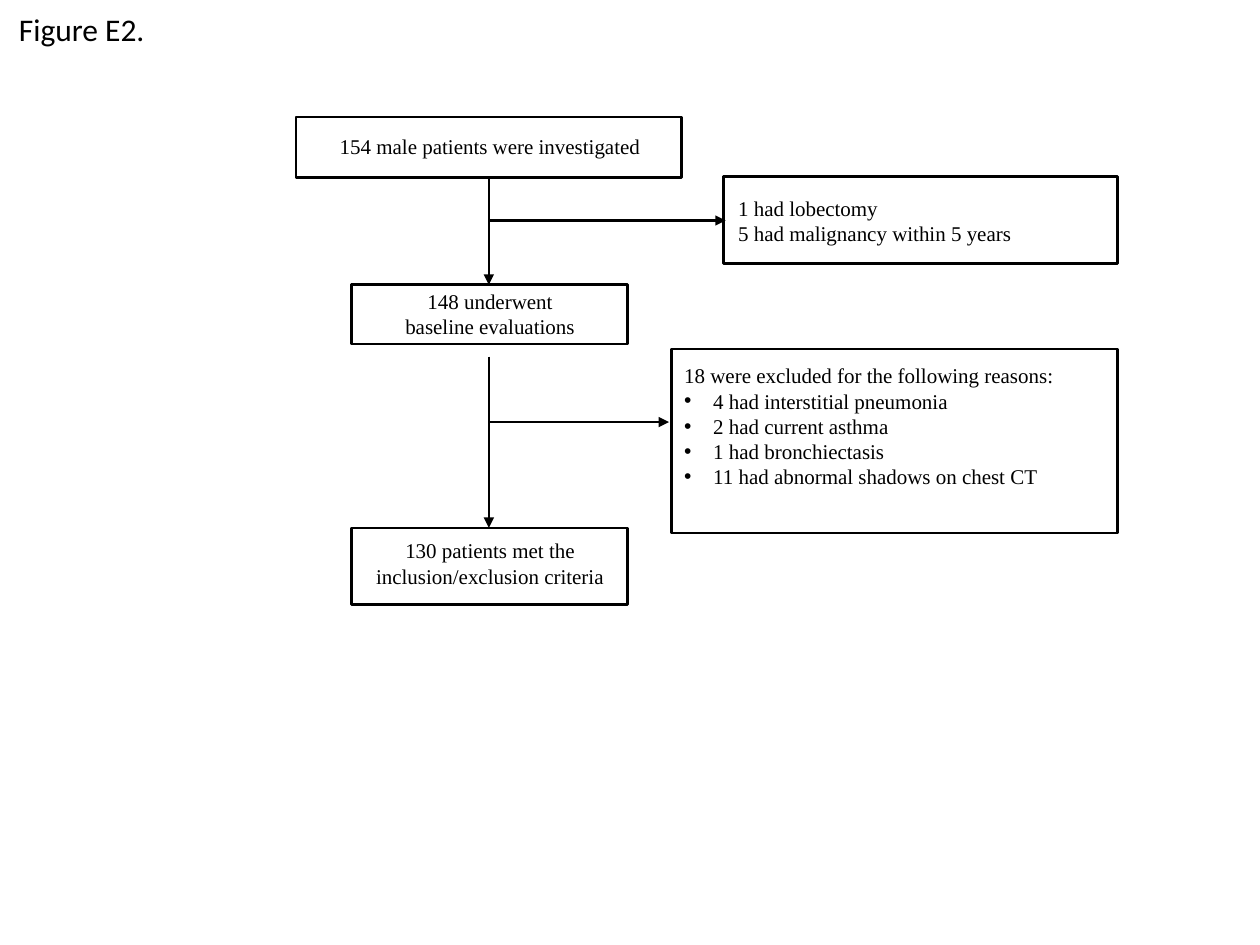
import pptx
import pptx.dml.color
import pptx.enum.shapes
import pptx.enum.text
import pptx.oxml
import pptx.oxml.ns
import pptx.util
from pptx.util import Inches

COLORS = {"ink": "000000"}
ALIGN = pptx.enum.text.PP_ALIGN
ANCHOR = pptx.enum.text.MSO_ANCHOR


class FlowSlide:
    """Style and current slide of a patient flow diagram."""

    ink = pptx.dml.color.RGBColor.from_string(COLORS["ink"])
    title_font = "Calibri"
    body_font = "Times New Roman"
    title_size = pptx.util.Pt(18)
    body_size = pptx.util.Pt(12)
    line_width = pptx.util.Pt(1.5)
    bullet_indent = Inches(0.23)

    def __init__(self, deck):
        self.slide = deck.slides.add_slide(deck.slide_layouts[1])

    def element(self, parent, tag, **attributes):
        child = pptx.oxml.parse_xml(f"<a:{tag} {pptx.oxml.ns.nsdecls('a')}/>")
        for key, value in attributes.items():
            child.set(key, value)
        parent.append(child)

    def place(self, holder, area):
        holder.left, holder.top, holder.width, holder.height = map(Inches, area)

    def set_lines(self, frame, lines, font, size, align, bullets_from=None):
        frame.word_wrap = True
        frame.auto_size = pptx.enum.text.MSO_AUTO_SIZE.NONE
        frame.vertical_anchor = ANCHOR.TOP
        for index, line in enumerate(lines):
            paragraph = frame.paragraphs[0] if index == 0 else frame.add_paragraph()
            paragraph.text = line
            if bullets_from is not None:
                self.bullet(paragraph, index >= bullets_from)
            paragraph.alignment = align
            paragraph.space_before = pptx.util.Pt(0)
            paragraph.font.name = font
            paragraph.font.size = size
            paragraph.font.color.rgb = self.ink

    def bullet(self, paragraph, shown):
        properties = paragraph._p.get_or_add_pPr()
        indent = self.bullet_indent if shown else 0
        properties.set("marL", str(indent))
        properties.set("indent", str(-indent))
        if shown:
            self.element(properties, "buFont", typeface="Arial")
            self.element(properties, "buChar", char="•")
        else:
            self.element(properties, "buNone")

    def title(self, text, area):
        heading = self.slide.shapes.title
        self.place(heading, area)
        self.set_lines(heading.text_frame, [text], self.title_font, self.title_size, ALIGN.LEFT)

    def bullet_list(self, lead, reasons, area):
        body = self.slide.placeholders[1]
        self.place(body, area)
        self.set_lines(body.text_frame, [lead, *reasons], self.body_font, self.body_size,
                       ALIGN.LEFT, bullets_from=1)

    def label(self, lines, area, align=ALIGN.CENTER):
        caption = self.slide.shapes.add_textbox(*map(Inches, area))
        self.set_lines(caption.text_frame, lines, self.body_font, self.body_size, align)

    def box(self, area):
        frame = self.slide.shapes.add_shape(
            pptx.enum.shapes.MSO_SHAPE.RECTANGLE, *map(Inches, area))
        frame.shadow.inherit = False
        frame.fill.background()
        frame.line.color.rgb = self.ink
        frame.line.width = self.line_width

    def arrow(self, start, end):
        connector = self.slide.shapes.add_connector(
            pptx.enum.shapes.MSO_CONNECTOR.STRAIGHT, *map(Inches, (*start, *end)))
        connector.line.color.rgb = self.ink
        connector.line.width = self.line_width
        properties = connector._element.spPr
        self.element(properties.get_or_add_ln(), "tailEnd", type="triangle")
        self.element(properties, "effectLst")


def main():
    deck = pptx.Presentation()
    deck.slide_width, deck.slide_height = Inches(10), Inches(7.5)
    flow = FlowSlide(deck)
    flow.title("Figure E2.", (0.05, 0.03, 2.45, 0.4))

    axis = 3.88
    for area in (
        (2.35, 0.93, 3.06, 0.48),
        (5.74, 1.4, 3.13, 0.69),
        (2.79, 2.26, 2.19, 0.47),
        (5.33, 2.77, 3.54, 1.46),
        (2.79, 4.19, 2.19, 0.61),
    ):
        flow.box(area)

    for top, bottom, branch, branch_end in (
        (1.4, 2.26, 1.75, 5.76),
        (2.83, 4.19, 3.35, 5.31),
    ):
        flow.arrow((axis, top), (axis, bottom))
        flow.arrow((axis, branch), (branch_end, branch))

    flow.label(["154 male patients were investigated"], (2.55, 1.01, 2.68, 0.3))
    flow.label(["1 had lobectomy", "5 had malignancy within 5 years"],
               (5.76, 1.5, 2.84, 0.5), ALIGN.LEFT)
    flow.label(["148 underwent", "baseline evaluations"], (2.82, 2.24, 2.14, 0.5))
    flow.label(["130 patients met the inclusion/exclusion criteria"], (2.82, 4.22, 2.14, 0.5))
    flow.bullet_list(
        "18 were excluded for the following reasons:",
        [
            "4 had interstitial pneumonia",
            "2 had current asthma",
            "1 had bronchiectasis",
            "11 had abnormal shadows on chest CT",
        ],
        (5.33, 2.83, 3.45, 1.11),
    )
    deck.save("out.pptx")


if __name__ == "__main__":
    main()
